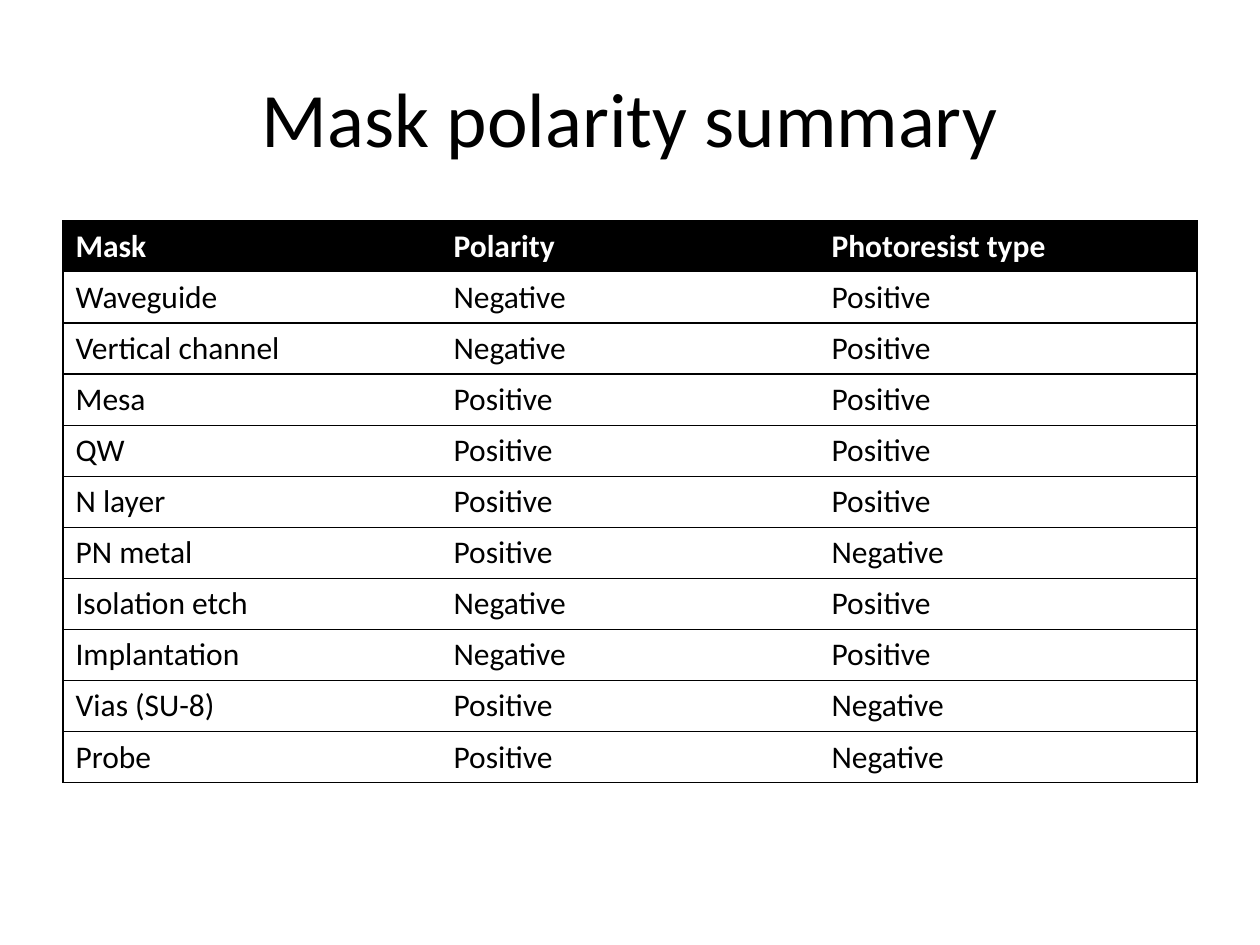
"""Build the mask polarity summary slide."""
import dataclasses

import lxml.etree
import pptx
import pptx.dml.color
import pptx.enum.text
import pptx.oxml.ns
import pptx.util

Cm = pptx.util.Cm
Pt = pptx.util.Pt


@dataclasses.dataclass(frozen=True)
class Theme:
    """Colours, font and sizes of the slide."""
    ink: str = "000000"
    paper: str = "FFFFFF"
    font: str = "Calibri"
    title_size: float = 44
    table_size: float = 18
    border_width: float = 0.75


HEADER = ("Mask", "Polarity", "Photoresist type")
MASKS = (
    ("Waveguide", "Negative", "Positive"),
    ("Vertical channel", "Negative", "Positive"),
    ("Mesa", "Positive", "Positive"),
    ("QW", "Positive", "Positive"),
    ("N layer", "Positive", "Positive"),
    ("PN metal", "Positive", "Negative"),
    ("Isolation etch", "Negative", "Positive"),
    ("Implantation", "Negative", "Positive"),
    ("Vias (SU-8)", "Positive", "Negative"),
    ("Probe", "Positive", "Negative"),
)


class SlideBuilder:
    """Hold the theme and the current slide."""

    def __init__(self, slide, theme):
        self.slide = slide
        self.theme = theme

    def add_span(self, para, text, color, **formats):
        """Add one styled span to a paragraph."""
        span = para.add_run()
        span.text = text
        for name, value in {"name": self.theme.font, **formats}.items():
            setattr(span.font, name, value)
        span.font.color.rgb = pptx.dml.color.RGBColor.from_string(color)

    def title(self, text, left, top, width, height):
        """Add the centred title."""
        box = self.slide.shapes.add_textbox(left, top, width, height)
        frame_formats = {
            "word_wrap": True,
            "vertical_anchor": pptx.enum.text.MSO_ANCHOR.MIDDLE,
        }
        for name, value in frame_formats.items():
            setattr(box.text_frame, name, value)
        para = box.text_frame.paragraphs[0]
        para.alignment = pptx.enum.text.PP_ALIGN.CENTER
        self.add_span(para, text, self.theme.ink, size=Pt(self.theme.title_size))

    def border(self, cell, side, visible):
        """Draw or clear one side of a cell."""
        qn = pptx.oxml.ns.qn
        properties = cell._tc.get_or_add_tcPr()
        line = lxml.etree.SubElement(properties, qn(f"a:ln{side}"))
        line.set("w", str(Pt(self.theme.border_width)))
        if visible:
            fill = lxml.etree.SubElement(line, qn("a:solidFill"))
            lxml.etree.SubElement(fill, qn("a:srgbClr")).set("val", self.theme.ink)
        else:
            lxml.etree.SubElement(line, qn("a:noFill"))

    def table(self, rows, left, top, width, height):
        """Add a ruled table with a dark header row."""
        theme = self.theme
        last_column = len(rows[0]) - 1
        table = self.slide.shapes.add_table(
            len(rows), len(rows[0]), left, top, width, height).table
        table.horz_banding = False
        for row_index, row in enumerate(rows):
            is_header = row_index == 0
            ink, paper = (theme.paper, theme.ink) if is_header else (theme.ink, theme.paper)
            for column_index, text in enumerate(row):
                cell = table.cell(row_index, column_index)
                sides = {"L": column_index == 0, "R": column_index == last_column,
                         "T": True, "B": True}
                for side, visible in sides.items():
                    self.border(cell, side, visible)
                cell.fill.solid()
                cell.fill.fore_color.rgb = pptx.dml.color.RGBColor.from_string(paper)
                self.add_span(cell.text_frame.paragraphs[0], text, ink,
                              size=Pt(theme.table_size), bold=is_header)


def main():
    """Build and save the deck."""
    deck = pptx.Presentation()
    deck.slide_width, deck.slide_height = Cm(25.4), Cm(19.05)
    page = SlideBuilder(deck.slides.add_slide(deck.slide_layouts[6]), Theme())
    page.title("Mask polarity summary", Cm(1.27), Cm(0.76), Cm(22.86), Cm(3.18))
    page.table((HEADER, *MASKS), Cm(1.27), Cm(4.45), Cm(22.86), Cm(11.33))
    deck.save("out.pptx")


if __name__ == "__main__":
    main()
